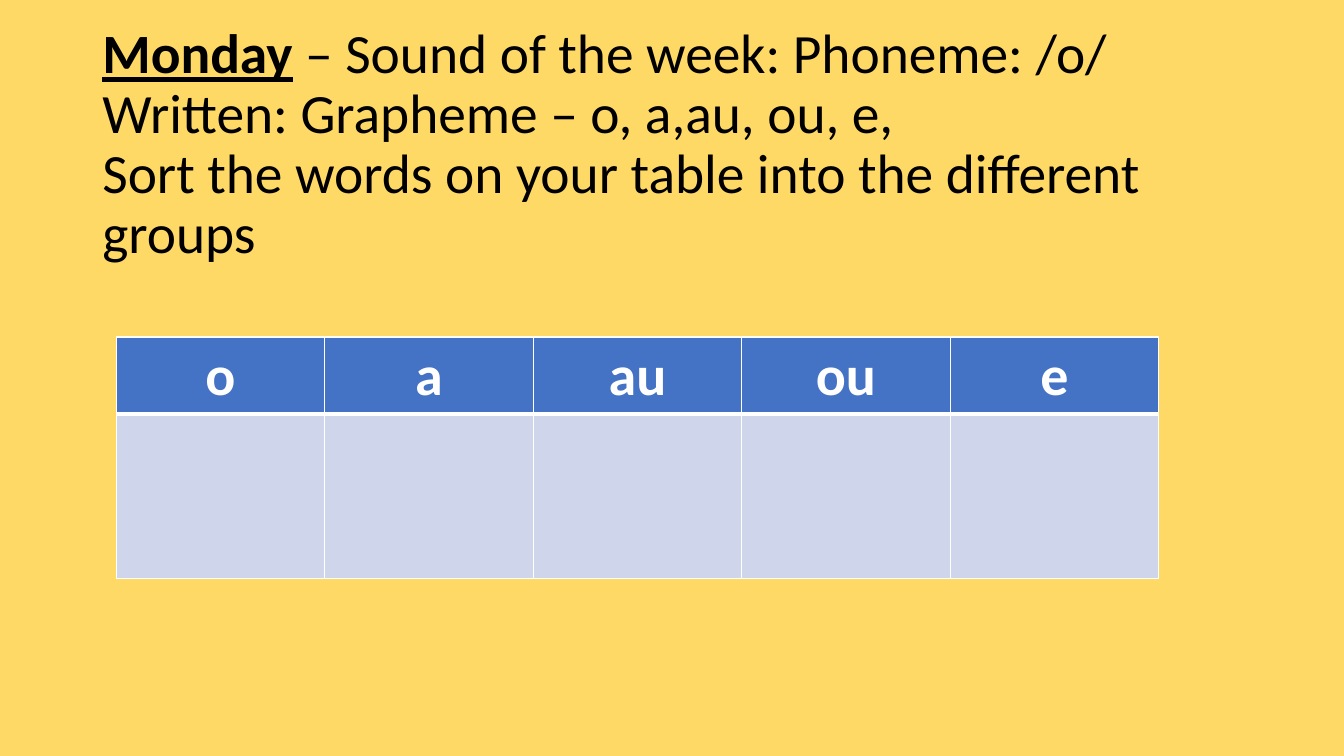
from lxml.etree import SubElement
from pptx import Presentation
from pptx.dml.color import RGBColor
from pptx.enum.text import MSO_ANCHOR as Anchor, PP_ALIGN as Align
from pptx.oxml.ns import qn
from pptx.util import Cm, Pt


def color(hex_value):
    return RGBColor.from_string(hex_value)


class Lesson:
    FONT = "Calibri"
    BACKGROUND, INK, WHITE = "FFD966", "000000", "FFFFFF"
    HEADER, BODY = "4472C4", "CFD5EA"

    def __init__(self, slide):
        self.slide = slide
        slide.background.fill.solid()
        slide.background.fill.fore_color.rgb = color(self.BACKGROUND)

    def style(self, run, size, ink, bold=False, underline=False):
        font = run.font
        font.name, font.size = self.FONT, Pt(size)
        font.bold, font.underline = bold, underline
        font.color.rgb = color(ink)

    def heading(self, day, lines, left, top, width, height):
        frame = self.slide.shapes.add_textbox(left, top, width, height).text_frame
        frame.word_wrap = True
        frame.vertical_anchor = Anchor.MIDDLE
        paragraph = frame.paragraphs[0]
        paragraph.line_spacing = 0.9
        paragraph.text = day
        self.style(paragraph.runs[0], 39.6, self.INK, bold=True, underline=True)
        for number, line in enumerate(lines):
            if number:
                paragraph.add_line_break()
            run = paragraph.add_run()
            run.text = line
            self.style(run, 39.6, self.INK)

    def borders(self, cell, **widths):
        properties = cell._tc.get_or_add_tcPr()
        for side in "LRTB":
            line = SubElement(properties, qn(f"a:ln{side}"),
                              w=str(Pt(widths.get(side, 1))))
            fill = SubElement(line, qn("a:solidFill"))
            SubElement(fill, qn("a:srgbClr"), val=self.WHITE)

    def fill(self, cell, shade):
        cell.fill.solid()
        cell.fill.fore_color.rgb = color(shade)

    def sorting_table(self, graphemes, left, top, width, row_heights):
        table = self.slide.shapes.add_table(
            len(row_heights), len(graphemes), left, top, width, sum(row_heights)).table
        for row, height in zip(table.rows, row_heights):
            row.height = height
        for column, grapheme in enumerate(graphemes):
            header, space = (table.cell(row, column) for row in range(2))
            self.borders(header, B=3)
            self.borders(space, T=3)
            self.fill(header, self.HEADER)
            self.fill(space, self.BODY)
            paragraph = header.text_frame.paragraphs[0]
            paragraph.text = grapheme
            paragraph.alignment = Align.CENTER
            self.style(paragraph.runs[0], 40, self.WHITE, bold=True)


def main():
    deck = Presentation()
    deck.slide_width, deck.slide_height = Cm(33.87), Cm(19.05)
    lesson = Lesson(deck.slides.add_slide(deck.slide_layouts[6]))

    # Sound of the week and the task
    lesson.heading("Monday", [
        " – Sound of the week: Phoneme: /o/ ",
        "Written: Grapheme – o, a,au, ou, e, ",
        "Sort the words on your table into the different groups",
    ], Cm(2.33), Cm(1.83), Cm(29.21), Cm(3.68))

    # One column for each spelling
    lesson.sorting_table(["o", "a", "au", "ou", "e"],
                         Cm(2.93), Cm(8.49), Cm(26.27), [Cm(1.95), Cm(4.13)])

    deck.save("out.pptx")


if __name__ == "__main__":
    main()
